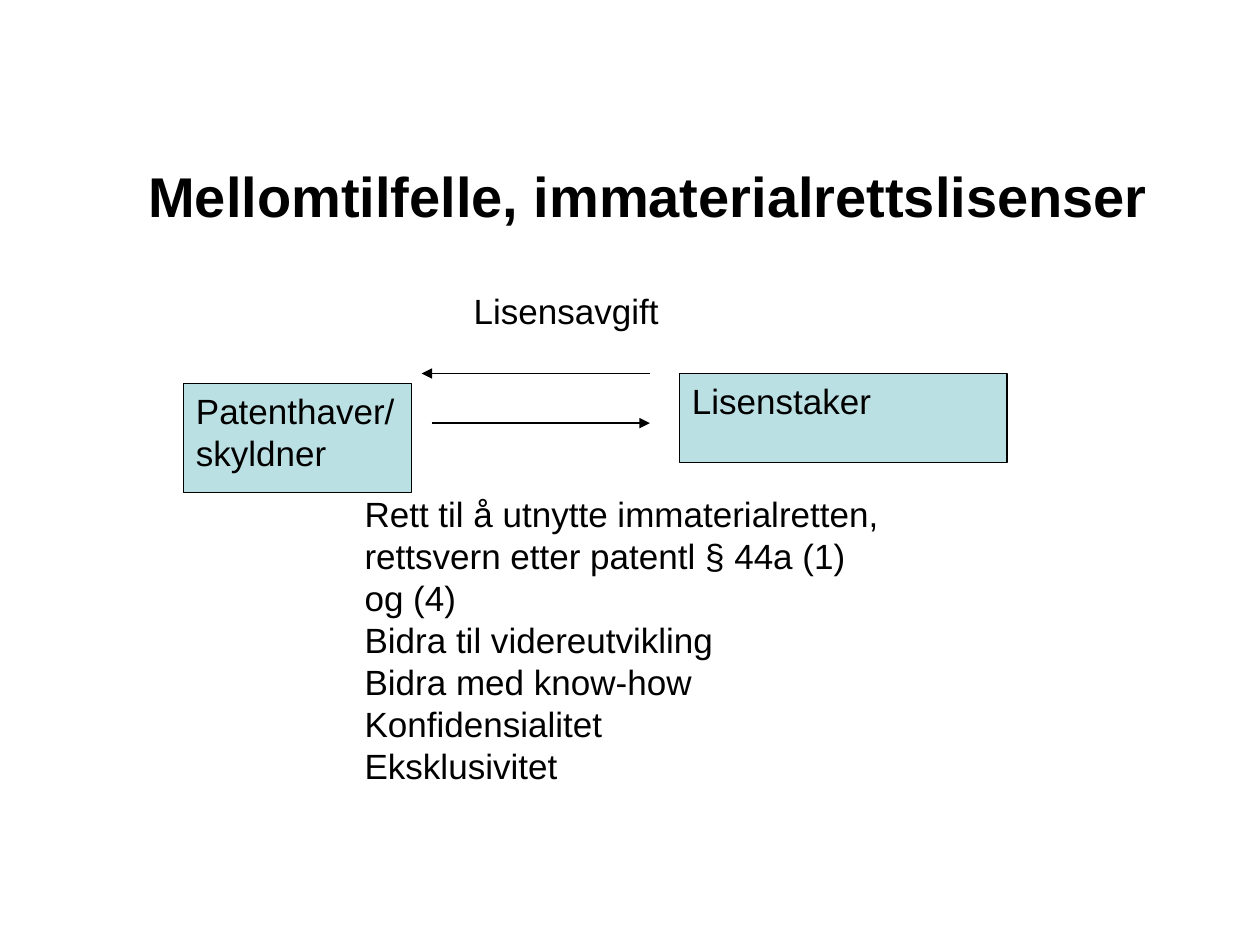
from lxml.etree import SubElement
from pptx import Presentation
from pptx.dml.color import RGBColor
from pptx.enum.shapes import MSO_CONNECTOR, MSO_SHAPE
from pptx.enum.text import MSO_ANCHOR, PP_ALIGN
from pptx.oxml.ns import qn
from pptx.util import Cm, Pt

BLACK = RGBColor(0x00, 0x00, 0x00)
PALE_TEAL = RGBColor(0xBB, 0xE0, 0xE3)
FONT = "Arial"

TITLE = ("Mellomtilfelle, immaterialrettslisenser", (2.74, 2.34, 21.39, 3.18))
PARTIES = [
    ("Patenthaver/skyldner", (3.7, 7.73, 4.6, 2.2)),
    ("Lisenstaker", (13.7, 7.53, 6.6, 1.8)),
]
FEE = (["Lisensavgift"], (9.3, 5.72, 4.4, 1.12))
DUTIES = (
    [
        "Rett til å utnytte immaterialretten, rettsvern etter patentl § 44a (1) og (4)",
        "Bidra til videreutvikling",
        "Bidra med know-how",
        "Konfidensialitet",
        "Eksklusivitet",
    ],
    (7.1, 9.8, 11, 7.09),
)
ARROWS = [(13.1, 8.5, 7.53), (8.7, 13.1, 8.53)]


def write(sp, lines, size=20, bold=False, anchor=MSO_ANCHOR.TOP):
    tf = sp.text_frame
    tf.word_wrap = True
    tf.vertical_anchor = anchor
    tf.text = "\n".join(lines)
    for p in tf.paragraphs:
        p.alignment = PP_ALIGN.LEFT
        p.font.name = FONT
        p.font.size = Pt(size)
        p.font.bold = bold
        p.font.color.rgb = BLACK


def add_text(s, lines, box, **style):
    sp = s.shapes.add_textbox(*map(Cm, box))
    write(sp, lines, **style)


def add_party(s, name, box):
    sp = s.shapes.add_shape(MSO_SHAPE.RECTANGLE, *map(Cm, box))
    sp.shadow.inherit = False
    sp.fill.solid()
    sp.fill.fore_color.rgb = PALE_TEAL
    sp.line.color.rgb = BLACK
    sp.line.width = Pt(0.75)
    write(sp, [name])


def add_arrow(s, start, end, y):
    c = s.shapes.add_connector(MSO_CONNECTOR.STRAIGHT, Cm(start), Cm(y), Cm(end), Cm(y))
    c.line.color.rgb = BLACK
    c.line.width = Pt(0.75)
    SubElement(c.line._get_or_add_ln(), qn("a:tailEnd"), type="triangle")
    SubElement(c._element.spPr, qn("a:effectLst"))


def main():
    prs = Presentation()
    prs.slide_width, prs.slide_height = Cm(25.4), Cm(19.05)
    s = prs.slides.add_slide(prs.slide_layouts[6])
    title, box = TITLE
    add_text(s, [title], box, size=32, bold=True, anchor=MSO_ANCHOR.MIDDLE)
    for name, box in PARTIES:
        add_party(s, name, box)
    for arrow in ARROWS:
        add_arrow(s, *arrow)
    for lines, box in (FEE, DUTIES):
        add_text(s, lines, box)
    prs.save("out.pptx")


if __name__ == "__main__":
    main()
